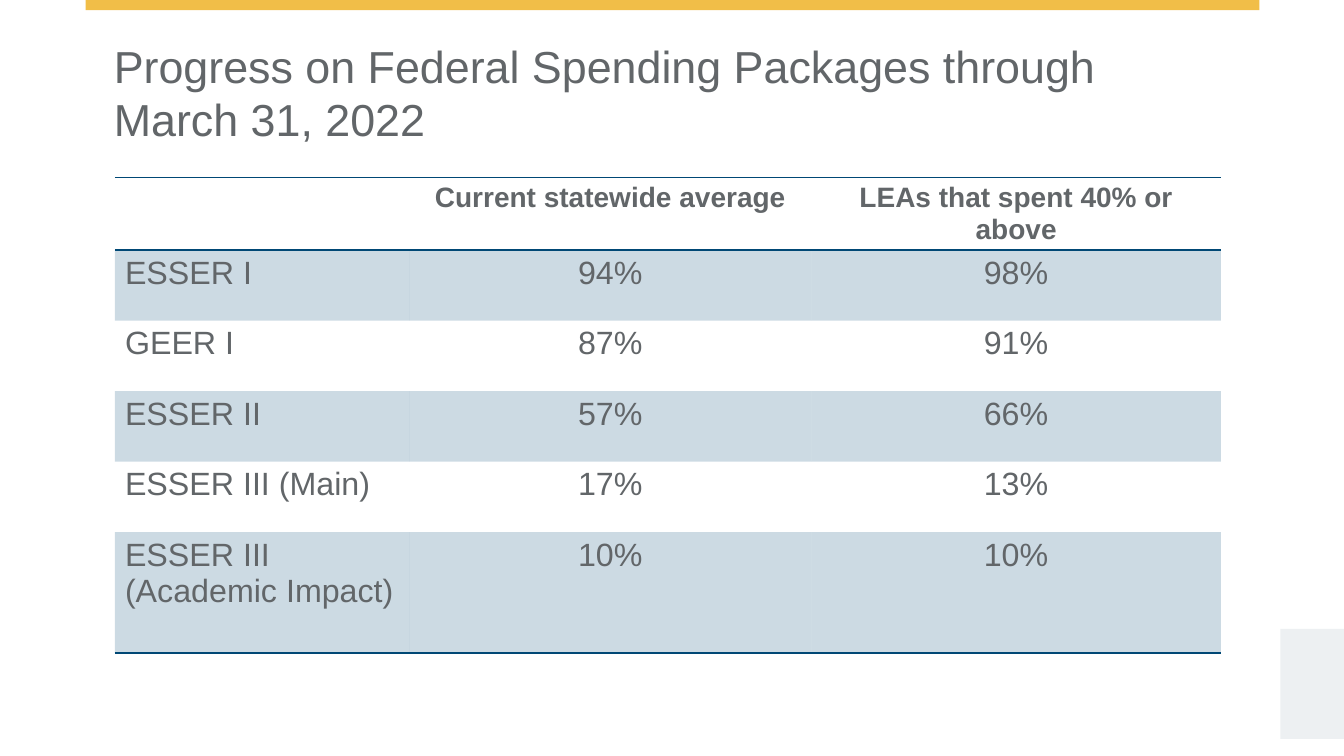
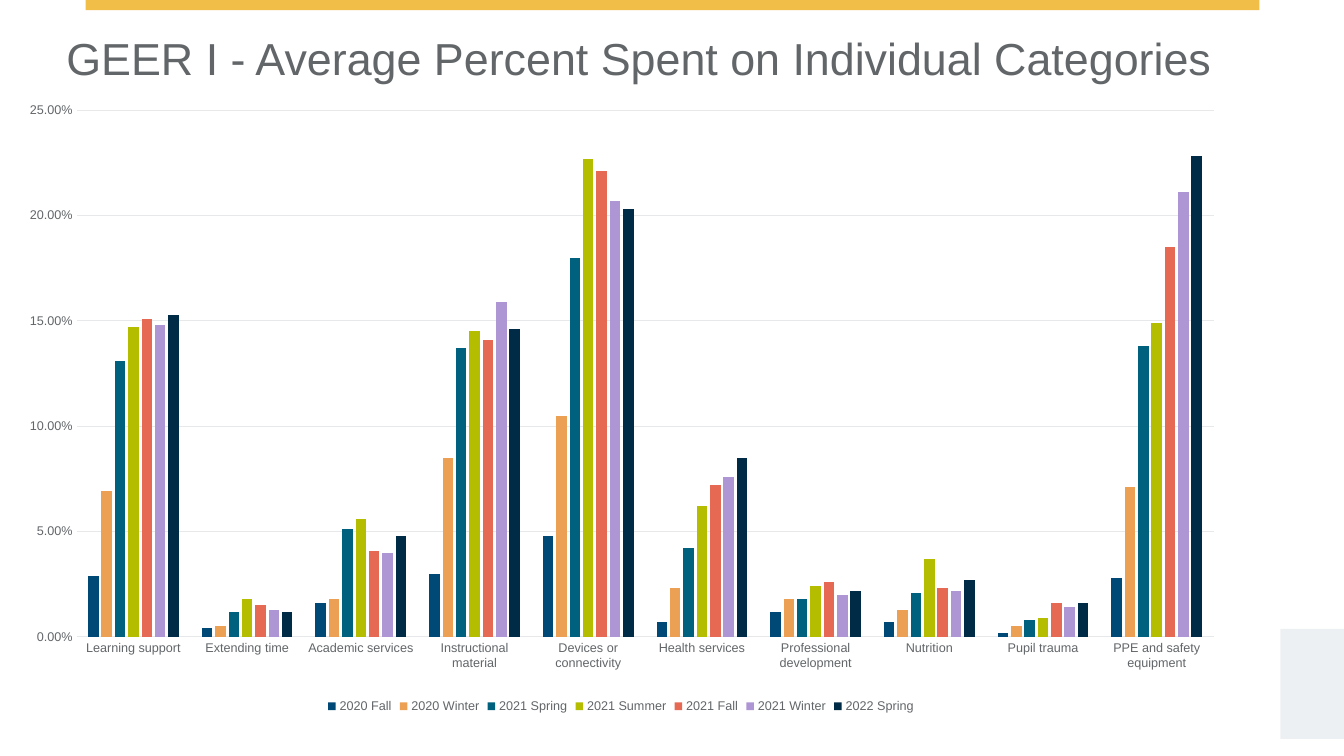
from lxml.etree import SubElement
from pptx import Presentation
from pptx.chart.data import CategoryChartData
from pptx.dml.color import RGBColor
from pptx.enum.chart import XL_CHART_TYPE, XL_LEGEND_POSITION, XL_TICK_MARK
from pptx.enum.shapes import MSO_SHAPE
from pptx.enum.text import PP_ALIGN
from pptx.oxml.ns import qn
from pptx.util import Inches, Pt

# Shared style
FONT = "Arial"
TEXT, NAVY, GOLD, MIST, GRID = "626669", "004875", "F1BE48", "EDF0F2", "E7E8E9"
WIDTH, HEIGHT = Inches(13.33), Inches(7.5)
NO_TABLE_STYLE = "{2D5ABB26-0587-4C30-8999-92F81FD0307C}"


def color(value):
    return RGBColor.from_string(value)


def set_font(font, size, bold=False):
    font.name, font.size, font.bold = FONT, Pt(size), bold
    font.color.rgb = color(TEXT)


def set_line(line, value, width):
    line.color.rgb = color(value)
    line.width = Pt(width)


class Deck:
    """Holds the style and the current slide; lengths are percent of the slide."""

    def __init__(self):
        self.presentation = Presentation()
        self.presentation.slide_width = WIDTH
        self.presentation.slide_height = HEIGHT
        self.slide = None

    def across(self, share):
        return round(WIDTH * share / 100)

    def down(self, share):
        return round(HEIGHT * share / 100)

    def box(self, left, top, width, height):
        return self.across(left), self.down(top), self.across(width), self.down(height)

    def add_slide(self):
        self.slide = self.presentation.slides.add_slide(self.presentation.slide_layouts[6])
        self.band(6.38, 0, 87.32, 1.33, GOLD)
        self.band(95.27, 83.2, 4.73, 14.53, MIST)

    def band(self, left, top, width, height, fill):
        shape = self.slide.shapes.add_shape(MSO_SHAPE.RECTANGLE, *self.box(left, top, width, height))
        shape.shadow.inherit = False
        shape.fill.solid()
        shape.fill.fore_color.rgb = color(fill)
        shape.line.fill.background()

    def title(self, left, top, lines):
        shape = self.slide.shapes.add_textbox(*self.box(left, top, 90, 15.73))
        frame = shape.text_frame
        frame.word_wrap = True
        frame.text = "\n".join(lines)
        for paragraph in frame.paragraphs:
            set_font(paragraph.font, 32)

    def table(self, left, top, columns, heights, rows):
        frame = self.slide.shapes.add_table(
            len(rows), len(columns), *self.box(left, top, sum(columns), sum(heights)))
        table = frame.table
        table.first_row = table.horz_banding = False
        next(frame.element.iter(qn("a:tableStyleId"))).text = NO_TABLE_STYLE
        for column, width in zip(table.columns, columns):
            column.width = self.across(width)
        for index, (height, texts) in enumerate(zip(heights, rows)):
            table.rows[index].height = self.down(height)
            for position, text in enumerate(texts):
                cell = table.cell(index, position)
                self.cell_text(cell, text, index == 0, position > 0)
                # Rules above and below the header and below the last row
                if index == 0:
                    self.cell_border(cell, "a:lnT")
                if index in (0, len(rows) - 1):
                    self.cell_border(cell, "a:lnB")
                self.cell_fill(cell, shaded=index % 2 == 1)

    def cell_text(self, cell, text, header, centered):
        cell.text = text
        paragraph = cell.text_frame.paragraphs[0]
        paragraph.alignment = PP_ALIGN.CENTER if centered else PP_ALIGN.LEFT
        set_font(paragraph.font, 20 if header else 23, header)

    def cell_border(self, cell, side):
        line = SubElement(cell._tc.get_or_add_tcPr(), qn(side), w=str(Pt(1)))
        fill = SubElement(line, qn("a:solidFill"))
        SubElement(fill, qn("a:srgbClr"), val=NAVY)

    def cell_fill(self, cell, shaded):
        if not shaded:
            cell.fill.background()
            return
        cell.fill.solid()
        cell.fill.fore_color.rgb = color(NAVY)
        tint = next(cell._tc.tcPr.find(qn("a:solidFill")).iter(qn("a:srgbClr")))
        SubElement(tint, qn("a:alpha"), val="20000")

    def column_chart(self, left, top, width, height, categories, series, plot_box):
        data = CategoryChartData(number_format="0.00%")
        data.categories = categories
        for name, _, values in series:
            data.add_series(name, values)
        chart = self.slide.shapes.add_chart(
            XL_CHART_TYPE.COLUMN_CLUSTERED, *self.box(left, top, width, height), data).chart
        set_font(chart.font, 10)
        chart.has_title = False

        # Columns
        plot = chart.plots[0]
        plot.gap_width, plot.overlap, plot.vary_by_categories = 219, -27, False
        for columns, (_, fill, _) in zip(plot.series, series):
            columns.format.fill.solid()
            columns.format.fill.fore_color.rgb = color(fill)
            columns.invert_if_negative = False

        # Axes
        for axis in (chart.category_axis, chart.value_axis):
            axis.major_tick_mark = axis.minor_tick_mark = XL_TICK_MARK.NONE
            set_font(axis.tick_labels.font, 9)
        set_line(chart.category_axis.format.line, GRID, 0.75)
        axis = chart.value_axis
        axis.minimum_scale, axis.maximum_scale, axis.major_unit = 0, 0.25, 0.05
        axis.tick_labels.number_format = "0.00%"
        axis.tick_labels.number_format_is_linked = False
        axis.format.line.fill.background()
        set_line(axis.major_gridlines.format.line, GRID, 0.75)

        # Legend
        chart.has_legend = True
        chart.legend.position = XL_LEGEND_POSITION.BOTTOM
        chart.legend.include_in_layout = False
        set_font(chart.legend.font, 9)
        self.place_plot(chart, plot_box)

    def place_plot(self, chart, plot_box):
        area = next(chart.element.iter(qn("c:plotArea")))
        layout = area.find(qn("c:layout"))
        if layout is None:
            layout = SubElement(area, qn("c:layout"))
            area.insert(0, layout)
        manual = SubElement(layout, qn("c:manualLayout"))
        settings = {"layoutTarget": "inner", "xMode": "edge", "yMode": "edge"}
        settings.update(zip("xywh", plot_box))
        for tag, value in settings.items():
            SubElement(manual, qn(f"c:{tag}"), val=str(value))


SPENDING = [
    ("", "Current statewide average", "LEAs that spent 40% or above"),
    ("ESSER I", "94%", "98%"),
    ("GEER I", "87%", "91%"),
    ("ESSER II", "57%", "66%"),
    ("ESSER III (Main)", "17%", "13%"),
    ("ESSER III (Academic Impact)", "10%", "10%"),
]

CATEGORIES = [
    "Learning support", "Extending time", "Academic services", "Instructional material",
    "Devices or connectivity", "Health services", "Professional development",
    "Nutrition", "Pupil trauma", "PPE and safety equipment",
]

PERIODS = [
    ("2020 Fall", NAVY, (0.029, 0.004, 0.016, 0.03, 0.048, 0.007, 0.012, 0.007, 0.002, 0.028)),
    ("2020 Winter", "ECA053", (0.069, 0.005, 0.018, 0.085, 0.105, 0.023, 0.018, 0.013, 0.005, 0.071)),
    ("2021 Spring", "00617F", (0.131, 0.012, 0.051, 0.137, 0.18, 0.042, 0.018, 0.021, 0.008, 0.138)),
    ("2021 Summer", "B5BD00", (0.147, 0.018, 0.056, 0.145, 0.227, 0.062, 0.024, 0.037, 0.009, 0.149)),
    ("2021 Fall", "E56953", (0.151, 0.015, 0.041, 0.141, 0.221, 0.072, 0.026, 0.023, 0.016, 0.185)),
    ("2021 Winter", "AE95D3", (0.148, 0.013, 0.04, 0.159, 0.207, 0.076, 0.02, 0.022, 0.014, 0.211)),
    ("2022 Spring", "002B46", (0.153, 0.012, 0.048, 0.146, 0.203, 0.085, 0.022, 0.027, 0.016, 0.228)),
]


def main():
    deck = Deck()

    # Spending progress table
    deck.add_slide()
    deck.table(8.55, 23.47, (21.9, 29.93, 30.46), (8.93, *[9.33] * 4, 16), SPENDING)
    deck.title(7.73, 4.4, ["Progress on Federal Spending Packages through", "March 31, 2022"])

    # Spending by category chart
    deck.add_slide()
    deck.title(4.2, 3.47, ["GEER I - Average Percent Spent on Individual Categories"])
    deck.column_chart(1.2, 12.93, 90, 82, CATEGORIES, PERIODS, (0.05, 0.02, 0.94, 0.85))

    deck.presentation.save("out.pptx")


if __name__ == "__main__":
    main()
